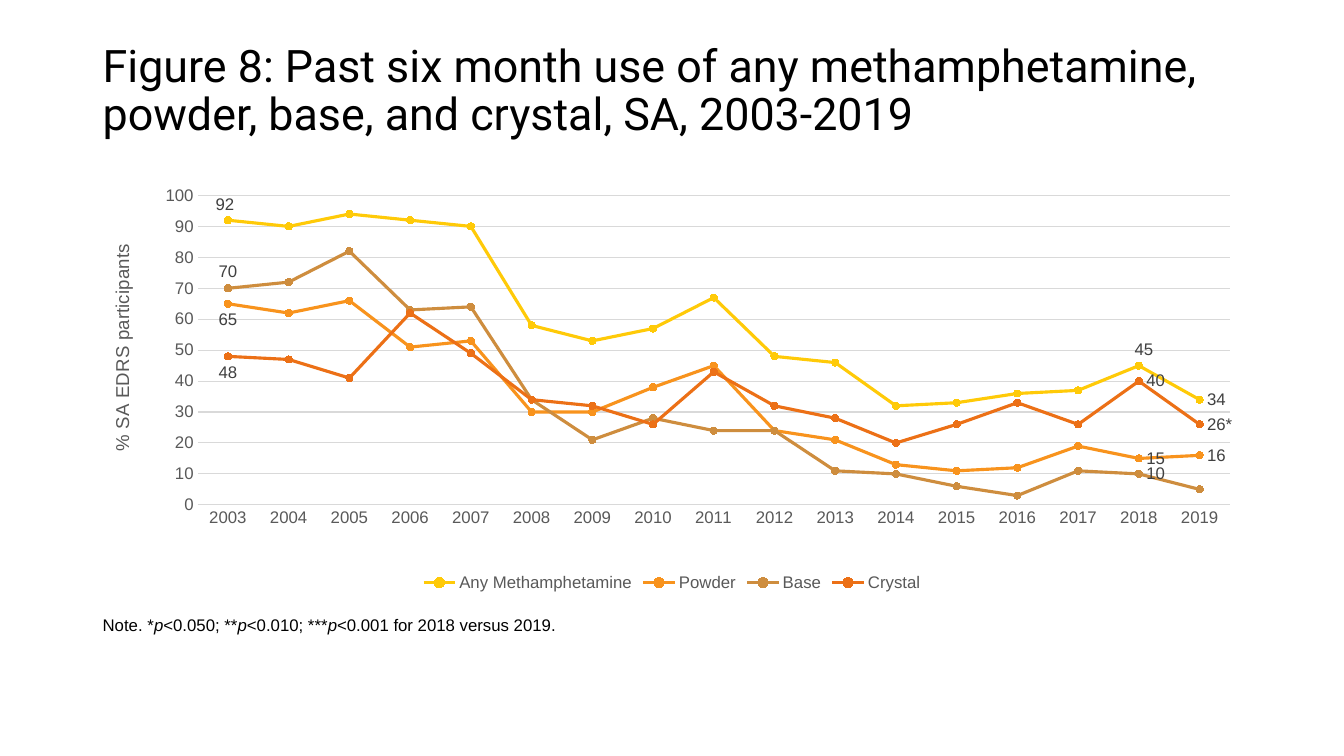
from lxml import etree
from pptx import Presentation
from pptx.chart.data import CategoryChartData
from pptx.dml.color import RGBColor
from pptx.enum.chart import XL_CHART_TYPE as ChartType
from pptx.enum.chart import XL_LABEL_POSITION as LabelPos
from pptx.enum.chart import XL_LEGEND_POSITION as LegendPos
from pptx.enum.chart import XL_MARKER_STYLE as MarkerStyle
from pptx.enum.chart import XL_TICK_MARK as TickMark
from pptx.enum.shapes import MSO_CONNECTOR
from pptx.enum.text import MSO_ANCHOR
from pptx.oxml.ns import qn
from pptx.util import Inches, Pt

WHITE = RGBColor(0xFF, 0xFF, 0xFF)
BLACK = RGBColor(0x00, 0x00, 0x00)
LABEL_GREY = RGBColor(0x40, 0x40, 0x40)
AXIS_GREY = RGBColor(0x59, 0x59, 0x59)
GRID_GREY = RGBColor(0xD9, 0xD9, 0xD9)
YELLOW = RGBColor(0xFF, 0xCA, 0x08)
AMBER = RGBColor(0xF8, 0x93, 0x1D)
BROWN = RGBColor(0xCE, 0x8D, 0x3E)
ORANGE = RGBColor(0xEC, 0x70, 0x16)

CHART_W, CHART_H = 11.51, 4.08
YEARS = [str(year) for year in range(2003, 2020)]
ABOVE, BELOW, RIGHT = LabelPos.ABOVE, LabelPos.BELOW, LabelPos.RIGHT
SERIES = [
    ("Any Methamphetamine", YELLOW,
     (92, 90, 94, 92, 90, 58, 53, 57, 67, 48, 46, 32, 33, 36, 37, 45, 34),
     {0: ABOVE, 15: ABOVE, 16: RIGHT}),
    ("Powder", AMBER,
     (65, 62, 66, 51, 53, 30, 30, 38, 45, 24, 21, 13, 11, 12, 19, 15, 16),
     {0: BELOW, 15: RIGHT, 16: RIGHT}),
    ("Base", BROWN,
     (70, 72, 82, 63, 64, 34, 21, 28, 24, 24, 11, 10, 6, 3, 11, 10, 5),
     {0: ABOVE, 15: RIGHT}),
    ("Crystal", ORANGE,
     (48, 47, 41, 62, 49, 34, 32, 26, 43, 32, 28, 20, 26, 33, 26, 40, 26),
     {0: BELOW, 15: RIGHT, 16: RIGHT}),
]
STARRED = {("Crystal", 16): "26*"}
NUDGES = {0: (-0.03, 0.01), 15: (0.05, 0)}
NOTE = ["Note. *", "p", "<0.050; **", "p", "<0.010; ***", "p",
        "<0.001 for 2018 versus 2019."]


def set_font(font, size, color, name="Arial"):
    """Give a font its size, colour and typeface."""
    font.size = Pt(size)
    font.bold = False
    font.color.rgb = color
    font.name = name


def add_text(s, top, height, runs, size, name, anchor):
    """Add a full-width text box; runs that read "p" are italic."""
    sp = s.shapes.add_textbox(Inches(0.92), Inches(top), Inches(11.5), Inches(height))
    tf = sp.text_frame
    tf.word_wrap = True
    tf.vertical_anchor = anchor
    p = tf.paragraphs[0]
    p.line_spacing = 0.9
    set_font(p.font, size, BLACK, name)
    for text in runs:
        r = p.add_run()
        r.text = text
        if text == "p":
            r.font.italic = True


def add_rule(s):
    """Add the white rule under the title."""
    y = Inches(1.58)
    rule = s.shapes.add_connector(MSO_CONNECTOR.STRAIGHT, 0, y, Inches(11.85), y)
    rule.line.color.rgb = WHITE
    rule.line.width = Pt(4.5)
    etree.SubElement(rule._element.spPr, qn("a:effectLst"))


def set_layout(parent, index, x, y, size=None, edge=True):
    """Place a chart part by inches from the chart edge or its usual place."""
    for old in parent.findall(qn("c:layout")):
        parent.remove(old)
    layout = etree.Element(qn("c:layout"))
    parent.insert(index, layout)
    manual = etree.SubElement(layout, qn("c:manualLayout"))
    settings = [("layoutTarget", "inner")] if size else []
    if edge:
        settings += [("xMode", "edge"), ("yMode", "edge")]
    settings += [("x", x / CHART_W), ("y", y / CHART_H)]
    if size:
        settings += [("w", size[0] / CHART_W), ("h", size[1] / CHART_H)]
    for tag, value in settings:
        etree.SubElement(manual, qn(f"c:{tag}")).set("val", str(value))


def style_axes(chart):
    """Style both axes, the gridlines and the value title."""
    years, share = chart.category_axis, chart.value_axis
    for axis in (years, share):
        axis.major_tick_mark = axis.minor_tick_mark = TickMark.NONE
        set_font(axis.tick_labels.font, 12, AXIS_GREY)
    share.minimum_scale, share.maximum_scale, share.major_unit = 0, 100, 10
    share.has_major_gridlines = True
    share.format.line.fill.background()
    for line in (years.format.line, share.major_gridlines.format.line):
        line.color.rgb = GRID_GREY
        line.width = Pt(0.75)
    tf = share.axis_title.text_frame
    tf.text = "% SA EDRS participants"
    set_font(tf.paragraphs[0].font, 13.3, AXIS_GREY)
    set_layout(share.axis_title._element, 1, 0.15, 0.56)


def style_series(series, color, labels):
    """Colour one line with its markers and label chosen points."""
    series.smooth = False
    series.format.line.color.rgb = color
    series.format.line.width = Pt(2.25)
    marker = series.marker
    marker.style, marker.size = MarkerStyle.CIRCLE, 5
    marker.format.fill.solid()
    marker.format.fill.fore_color.rgb = color
    marker.format.line.color.rgb = color
    series.data_labels.show_value = False
    for index, position in labels.items():
        label = series.points[index].data_label
        text = STARRED.get((series.name, index))
        if text:
            label.text_frame.text = text
            set_font(label.text_frame.paragraphs[0].font, 12, LABEL_GREY)
        else:
            set_font(label.font, 12, LABEL_GREY)
        label.position = position


def nudge_labels(series):
    """Shift the labels of a series that stand off their usual place."""
    for label in series.data_labels._element.findall(qn("c:dLbl")):
        index = int(label.find(qn("c:idx")).get("val"))
        if index in NUDGES:
            set_layout(label, 1, *NUDGES[index], edge=False)


def add_use_chart(s):
    """Add the line chart of use by year."""
    data = CategoryChartData()
    data.categories = YEARS
    for name, _, values, _ in SERIES:
        data.add_series(name, values)
    chart = s.shapes.add_chart(ChartType.LINE_MARKERS, Inches(0.91), Inches(1.83),
                               Inches(CHART_W), Inches(CHART_H), data).chart
    set_font(chart.font, 10, BLACK)
    chart.has_title = False
    chart.has_legend = True
    chart.legend.position = LegendPos.BOTTOM
    chart.legend.include_in_layout = False
    set_font(chart.legend.font, 12, AXIS_GREY)
    plot = chart.plots[0]
    plot.vary_by_categories = False
    style_axes(chart)
    set_layout(chart._chartSpace.chart.plotArea, 0, 1.05, 0.11, (10.24, 3.07))
    for series, (_, color, _, labels) in zip(plot.series, SERIES):
        style_series(series, color, labels)
    nudge_labels(plot.series[0])


def main():
    """Build the slide and save it."""
    prs = Presentation()
    prs.slide_width, prs.slide_height = Inches(13.33), Inches(7.5)
    s = prs.slides.add_slide(prs.slide_layouts[6])
    title = ("Figure 8: Past six month use of any methamphetamine, "
             "powder, base, and crystal, SA, 2003-2019")
    add_rule(s)
    add_text(s, 0.4, 1.03, [title], 32, "Roboto", MSO_ANCHOR.MIDDLE)
    add_use_chart(s)
    add_text(s, 6.07, 0.49, NOTE, 12, "Arial", MSO_ANCHOR.TOP)
    prs.save("out.pptx")


if __name__ == "__main__":
    main()
